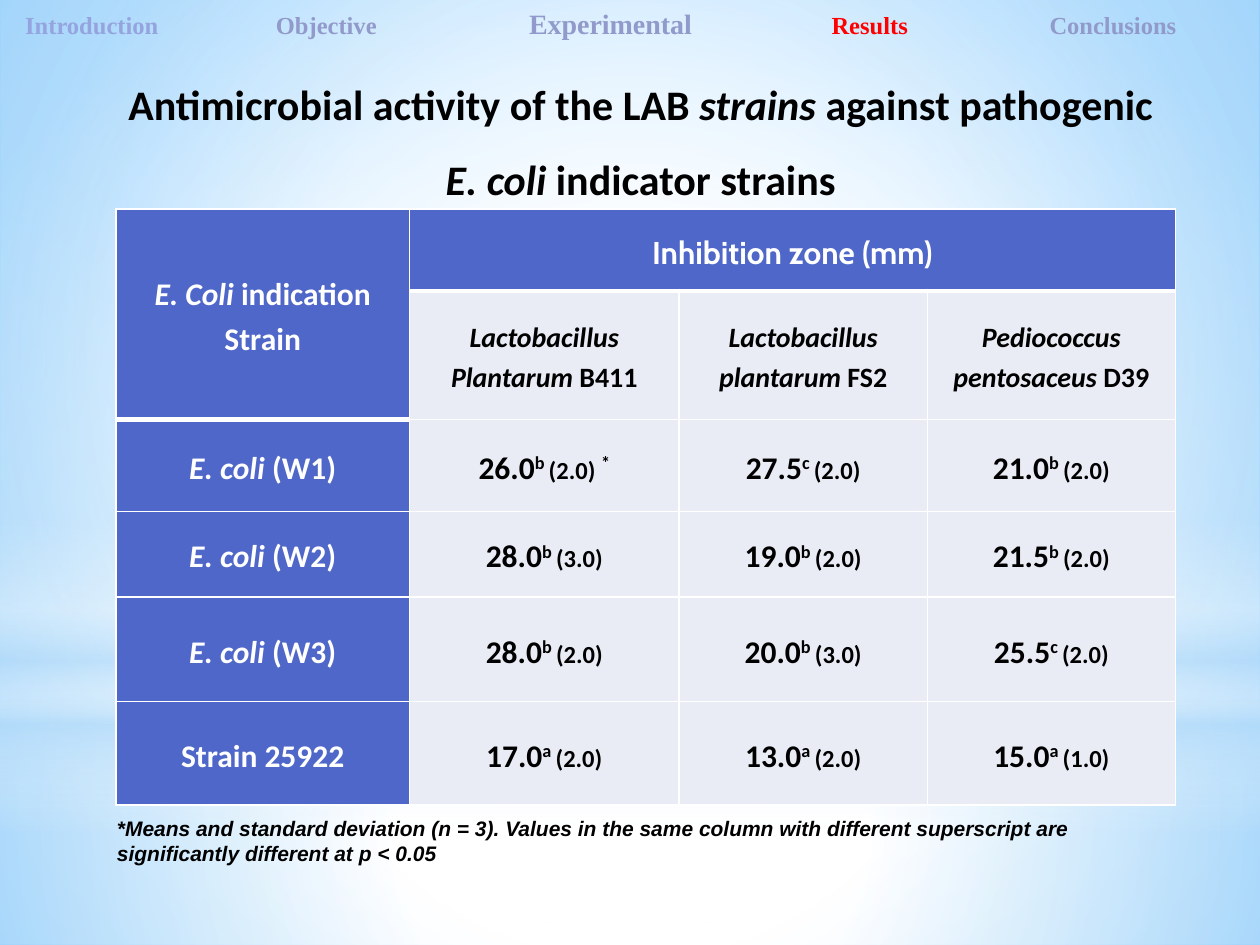
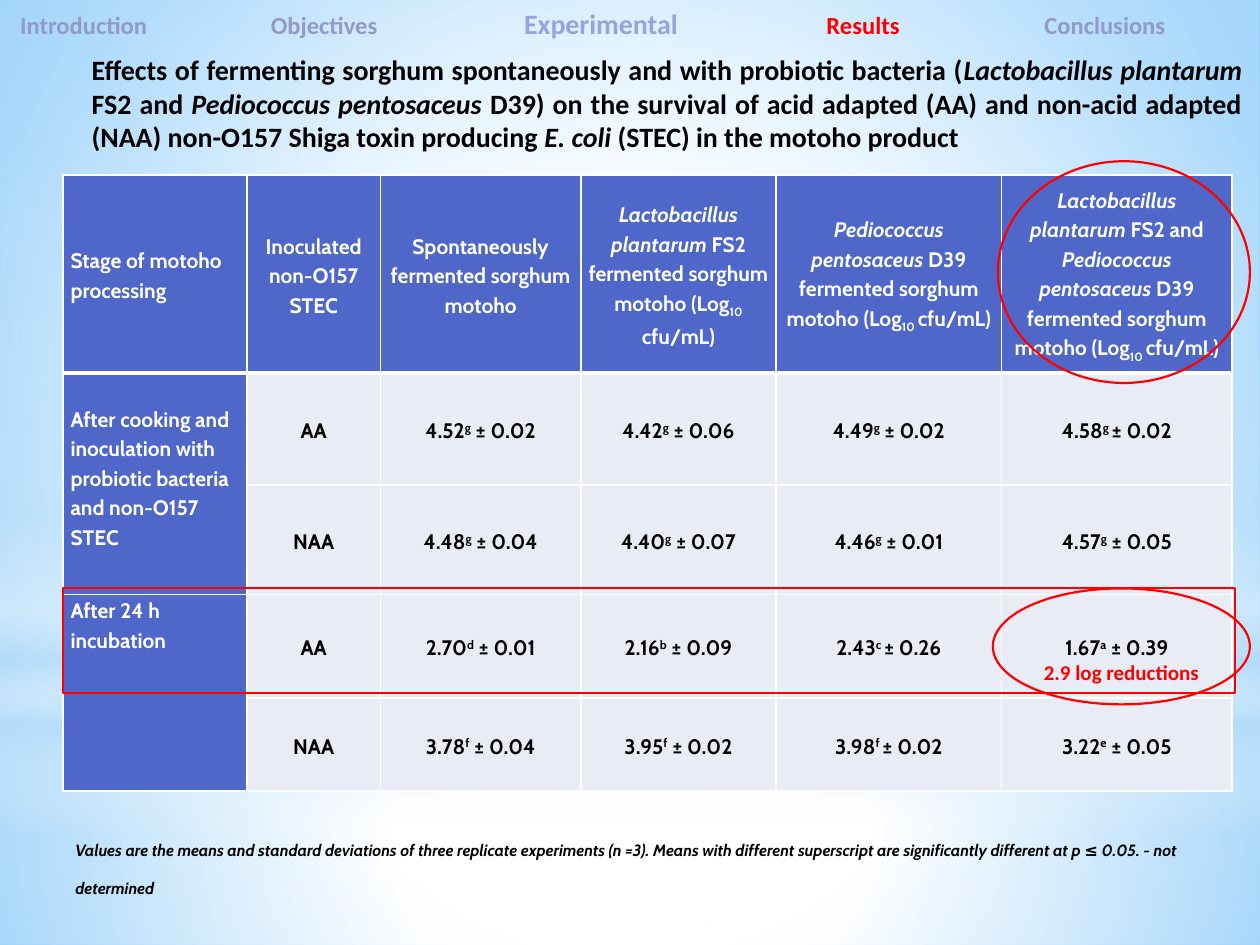
from dataclasses import dataclass
from itertools import accumulate

from lxml.etree import SubElement
from pptx import Presentation
from pptx.dml.color import RGBColor
from pptx.enum.shapes import MSO_SHAPE
from pptx.enum.text import MSO_ANCHOR, PP_ALIGN
from pptx.oxml.ns import qn
from pptx.util import Inches, Pt

GRID = 0.1
WHITE = RGBColor(0xFF, 0xFF, 0xFF)
BLACK = RGBColor(0x00, 0x00, 0x00)
RED = RGBColor(0xFF, 0x00, 0x00)
SKY = RGBColor(0x63, 0xBC, 0xFF)
MIST = RGBColor(0xB4, 0xDC, 0xFA)
BLUE = RGBColor(0x4E, 0x67, 0xC8)
PALE = RGBColor(0xE9, 0xEB, 0xF5)
LAVENDER = RGBColor(0x95, 0xA4, 0xDE)
SLATE = RGBColor(0x91, 0x9A, 0xCA)

NAV_TABS = (19.9, 40, 64, 81.3)
CENTRE = (50, 50, 50, 50)
ITALIC, RAISED, LOWERED = "_", "^", "~"


@dataclass(frozen=True)
class Box:
    left: float
    top: float
    width: float
    height: float

    def inner(self, left, top, width, height):
        return Box(self.left + left, self.top + top, width, height)

    def place(self):
        return [Inches(side * GRID) for side in (self.left, self.top, self.width, self.height)]


SLIDE = Box(0, 0, 100, 75)


def write(para, text, size=12, font="Calibri", color=BLACK, bold=True, italic=False, baseline=0):
    def add_span(piece):
        if not piece:
            return
        span = para.add_run()
        span.text = piece
        span.font.size = Pt(size)
        span.font.name = font
        span.font.bold = bold
        span.font.italic = italic
        span.font.color.rgb = color
        if baseline:
            span._r.get_or_add_rPr().set("baseline", str(baseline * 1000))

    piece = ""
    for letter in text:
        if letter not in (ITALIC, RAISED, LOWERED):
            piece += letter
            continue
        add_span(piece)
        piece = ""
        if letter == ITALIC:
            italic = not italic
        else:
            baseline = 0 if baseline else {RAISED: 30, LOWERED: -25}[letter]
    add_span(piece)


def add_text(page, box, text, align=PP_ALIGN.LEFT, spacing=1.0, **style):
    frame = page.shapes.add_textbox(*box.place()).text_frame
    frame.word_wrap = True
    para = frame.paragraphs[0]
    para.alignment = align
    para.line_spacing = spacing
    write(para, text, **style)
    return frame


def set_gradient(fill, element, stops, focus=None):
    fill.solid()
    solid = element.find(".//" + qn("a:solidFill"))
    gradient = SubElement(solid.getparent(), qn("a:gradFill"), rotWithShape="1")
    solid.getparent().replace(solid, gradient)
    stop_list = SubElement(gradient, qn("a:gsLst"))
    for position, color, alpha in stops:
        stop = SubElement(stop_list, qn("a:gs"), pos=str(position * 1000))
        tint = SubElement(stop, qn("a:srgbClr"), val=str(color))
        if alpha < 100:
            SubElement(tint, qn("a:alpha"), val=str(alpha * 1000))
    if focus:
        circle = SubElement(gradient, qn("a:path"))
        circle.set("path", "circle")
        sides = {side: str(share * 1000) for side, share in zip("ltrb", focus)}
        SubElement(circle, qn("a:fillToRect"), **sides)
    else:
        SubElement(gradient, qn("a:lin"), ang="5400000", scaled="0")


def add_backdrop(page, box):
    set_gradient(page.background.fill, page.element,
                 [(0, WHITE, 100), (42, WHITE, 100), (100, SKY, 100)], (24, 44, 24, 12))
    glows = [
        (MSO_SHAPE.RECTANGLE, 55.8, 19.2, CENTRE,
         [(0, WHITE, 91), (37, WHITE, 76), (100, MIST, 79)]),
        (MSO_SHAPE.RECTANGLE, 0, 55.8, CENTRE,
         [(0, WHITE, 89), (48, WHITE, 62), (100, MIST, 79)]),
        (MSO_SHAPE.RECTANGLE, 41.2, 25, None,
         [(0, WHITE, 0), (29, WHITE, 30), (45, MIST, 40),
          (55, WHITE, 26), (65, MIST, 60), (100, WHITE, 0)]),
        (MSO_SHAPE.OVAL, 17.5, 55.8, CENTRE, [(0, WHITE, 100), (56, WHITE, 0)]),
    ]
    for kind, top, height, focus, stops in glows:
        glow = page.shapes.add_shape(kind, *box.inner(0, top, box.width, height).place())
        glow.shadow.inherit = False
        glow.line.fill.background()
        set_gradient(glow.fill, glow.element, stops, focus)


def add_navigation(page, box, sections, font):
    frame = add_text(page, box, "", font=font)
    frame.margin_left = Inches(2 * GRID)
    para = frame.paragraphs[0]
    tabs = SubElement(para._p.get_or_add_pPr(), qn("a:tabLst"))
    for position in NAV_TABS:
        SubElement(tabs, qn("a:tab"), pos=str(Inches(position * GRID)), algn="l")
    for index, (name, color) in enumerate(sections):
        if index:
            write(para, "\t", size=14, font=font)
        write(para, name, size=16 if name == "Experimental" else 14, font=font, color=color)


def set_borders(cell, bottom):
    properties = cell._tc.get_or_add_tcPr()
    for index, (side, width) in enumerate(zip("LRTB", (1, 1, 1, bottom))):
        line = SubElement(properties, qn("a:ln" + side), w=str(Pt(width)))
        fill = SubElement(line, qn("a:solidFill"))
        SubElement(fill, qn("a:srgbClr"), val=str(WHITE))
        properties.insert(index, line)


def add_grid(page, box, columns, rows, margin):
    table = page.shapes.add_table(len(rows), len(columns), *box.place()).table
    table.first_row = table.horz_banding = False
    for column, width in zip(table.columns, columns):
        column.width = Inches(width * GRID)
    for row, height in zip(table.rows, rows):
        row.height = Inches(height * GRID)
    for row in range(len(rows)):
        for column in range(len(columns)):
            cell = table.cell(row, column)
            cell.margin_left = cell.margin_right = Inches(margin)
            cell.margin_top = cell.margin_bottom = 0
            cell.vertical_anchor = MSO_ANCHOR.MIDDLE
            cell.fill.solid()
            cell.fill.fore_color.rgb = BLUE if row == 0 or column == 0 else PALE
    return table


def fill_cell(cell, text, align=PP_ALIGN.CENTER, **style):
    para = cell.text_frame.paragraphs[0]
    para.alignment = align
    para.line_spacing = 1.15
    write(para, text, **style)
    return para


def add_inhibition_table(page, box):
    table = add_grid(page, box, (23.3, 21.4, 19.7, 19.7), (6.5, 10.2, 7.3, 6.8, 8.3, 8.2), 0.07)
    for row in range(6):
        for column in range(4):
            thick = row == 0 or (row, column) == (1, 0)
            set_borders(table.cell(row, column), 3 if thick else 1)
    table.cell(0, 0).merge(table.cell(1, 0))
    table.cell(0, 1).merge(table.cell(0, 3))
    fill_cell(table.cell(0, 0), "_E. Coli_ indication Strain", size=18, color=WHITE)
    fill_cell(table.cell(0, 1), "Inhibition zone (mm)", size=18, font="Cabin", color=WHITE)
    cultures = ("_Lactobacillus Plantarum _B411", "_Lactobacillus plantarum _FS2",
                "_Pediococcus pentosaceus _D39")
    for column, culture in enumerate(cultures, 1):
        fill_cell(table.cell(1, column), culture, size=16)
    zones = [
        ("_E. coli _(W1)", "26.0 b 2.0", "27.5 c 2.0", "21.0 b 2.0"),
        ("_E. coli _(W2)", "28.0 b 3.0", "19.0 b 2.0", "21.5 b 2.0"),
        ("_E. coli _(W3)", "28.0 b 2.0", "20.0 b 3.0", "25.5 c 2.0"),
        ("Strain 25922", "17.0 a 2.0", "13.0 a 2.0", "15.0 a 1.0"),
    ]
    for row, (strain, *results) in enumerate(zones, 2):
        fill_cell(table.cell(row, 0), strain, size=18, color=WHITE)
        for column, result in enumerate(results, 1):
            mean, group, deviation = result.split()
            para = fill_cell(table.cell(row, column), f"{mean}^{group} ^", size=18)
            write(para, f"({deviation})", size=14)
            if (row, column) == (2, 1):
                write(para, " ", size=14)
                write(para, "^*^", size=18)


def add_survival_table(page, box, columns, rows):
    table = add_grid(page, box, columns, rows, 0.06)
    for row in range(len(rows)):
        for column in range(len(columns)):
            set_borders(table.cell(row, column), 3 if row == 0 else 1)
    unit = "fermented sorghum motoho (Log~10 ~cfu/mL)"
    headings = (
        "Stage of motoho processing", "Inoculated non-O157 STEC",
        "Spontaneously fermented sorghum motoho",
        f"_Lactobacillus plantarum _FS2 {unit}",
        f"_Pediococcus pentosaceus _D39 {unit}",
        f"_Lactobacillus plantarum _FS2 and _Pediococcus pentosaceus_ D39 {unit}",
    )
    for column, heading in enumerate(headings):
        fill_cell(table.cell(0, column), heading, font="Cabin", color=WHITE,
                  align=PP_ALIGN.CENTER if column else PP_ALIGN.LEFT)
    stages = [
        (1, "After cooking and inoculation with probiotic bacteria and non-O157 STEC", 0.24),
        (3, "After 24 h incubation", 0),
    ]
    for row, stage, margin in stages:
        cell = table.cell(row, 0)
        cell.merge(table.cell(row + 1, 0))
        cell.vertical_anchor = MSO_ANCHOR.TOP
        cell.margin_top = Inches(margin)
        fill_cell(cell, stage, align=PP_ALIGN.LEFT, font="Cabin", color=WHITE)
    counts = [
        ("AA", "4.52^g^ ± 0.02", "4.42^g^ ± 0.06", "4.49^g^ ± 0.02", "4.58^g ^± 0.02"),
        ("NAA", "4.48^g^ ± 0.04", "4.40^g^ ± 0.07", "4.46^g^ ± 0.01", "4.57^g^ ± 0.05"),
        ("AA", "2.70^d^ ± 0.01", "2.16^b^ ± 0.09", "2.43^c ^± 0.26", "1.67^a^ ± 0.39"),
        ("NAA", "3.78^f^ ± 0.04", "3.95^f^ ± 0.02", "3.98^f ^± 0.02", "3.22^e^ ± 0.05"),
    ]
    for row, values in enumerate(counts, 1):
        for column, value in enumerate(values, 1):
            fill_cell(table.cell(row, column), value, font="Cabin")


def add_outline(page, kind, box):
    outline = page.shapes.add_shape(kind, *box.place())
    outline.shadow.inherit = False
    outline.fill.background()
    outline.line.color.rgb = RED
    outline.line.width = Pt(1.25)
    return outline


def add_highlights(page, box, columns, rows):
    last_column = list(accumulate(columns))[-2]
    incubation = sum(rows[:3]) - 0.5
    add_outline(page, MSO_SHAPE.OVAL, box.inner(last_column - 0.3, -1.1, 20, 17.6))
    add_outline(page, MSO_SHAPE.RECTANGLE, box.inner(0, incubation, 93, 8.3))
    result = add_outline(page, MSO_SHAPE.OVAL, box.inner(last_column - 0.7, incubation, 20.4, 9.2))
    frame = result.text_frame
    frame.word_wrap = True
    frame.vertical_anchor = MSO_ANCHOR.BOTTOM
    frame.margin_top = 0
    frame.margin_bottom = Inches(0.02)
    frame.paragraphs[0].alignment = PP_ALIGN.CENTER
    write(frame.paragraphs[0], "2.9 log reductions", color=RED)


def build_inhibition(page, box):
    add_backdrop(page, box)
    add_inhibition_table(page, box.inner(9.2, 16.6, 84.2, 47.3))
    add_text(page, box.inner(9.2, 3.7, 83.3, 13.1),
             "Antimicrobial activity of the LAB_ strains _against pathogenic "
             "_E. coli _indicator strains", align=PP_ALIGN.CENTER, spacing=1.5, size=24)
    add_text(page, box.inner(8.3, 64.2, 85, 5.2),
             "*Means and standard deviation (n = 3). Values in the same column with "
             "different superscript are significantly different at p < 0.05",
             font="Arial", italic=True)
    add_navigation(page, box.inner(0, 0, box.width, 3.7),
                   [("Introduction", LAVENDER), ("Objective", SLATE), ("Experimental", SLATE),
                    ("Results", RED), ("Conclusions", SLATE)], "Times New Roman")


def build_survival(page, box):
    columns = (14.6, 10.6, 15.9, 15.5, 17.9, 18.3)
    rows = (15.7, 8.9, 8.7, 8.2, 7.4)
    table_box = box.inner(5, 13.9, 92.8, 48.9)
    add_backdrop(page, box)
    add_survival_table(page, table_box, columns, rows)
    add_text(page, box.inner(6.3, 3.7, 93.3, 9.1),
             "Effects of fermenting sorghum spontaneously and with probiotic bacteria "
             "(_Lactobacillus plantarum _FS2 and _Pediococcus pentosaceus_ D39) on the survival "
             "of acid adapted (AA) and non-acid adapted (NAA) non-O157 Shiga toxin producing "
             "_E. coli_ (STEC) in the motoho product", align=PP_ALIGN.JUSTIFY, size=16)
    add_text(page, box.inner(5, 65.5, 93, 5.9),
             "Values are the means and standard deviations of three replicate experiments (n =3). "
             "Means with different superscript are significantly different at p ≤ 0.05. - "
             "not determined", spacing=1.15, size=16, font="Cabin", italic=True, baseline=30)
    add_highlights(page, table_box, columns, rows)
    add_navigation(page, box.inner(-0.4, 0, box.width, 3.7),
                   [("Introduction", SLATE), ("Objectives", SLATE), ("Experimental", LAVENDER),
                    ("Results", RED), ("Conclusions", SLATE)], "Calibri")


def main():
    deck = Presentation()
    deck.slide_width, deck.slide_height = SLIDE.place()[2:]
    for build in (build_inhibition, build_survival):
        build(deck.slides.add_slide(deck.slide_layouts[6]), SLIDE)
    deck.save("out.pptx")


if __name__ == "__main__":
    main()
